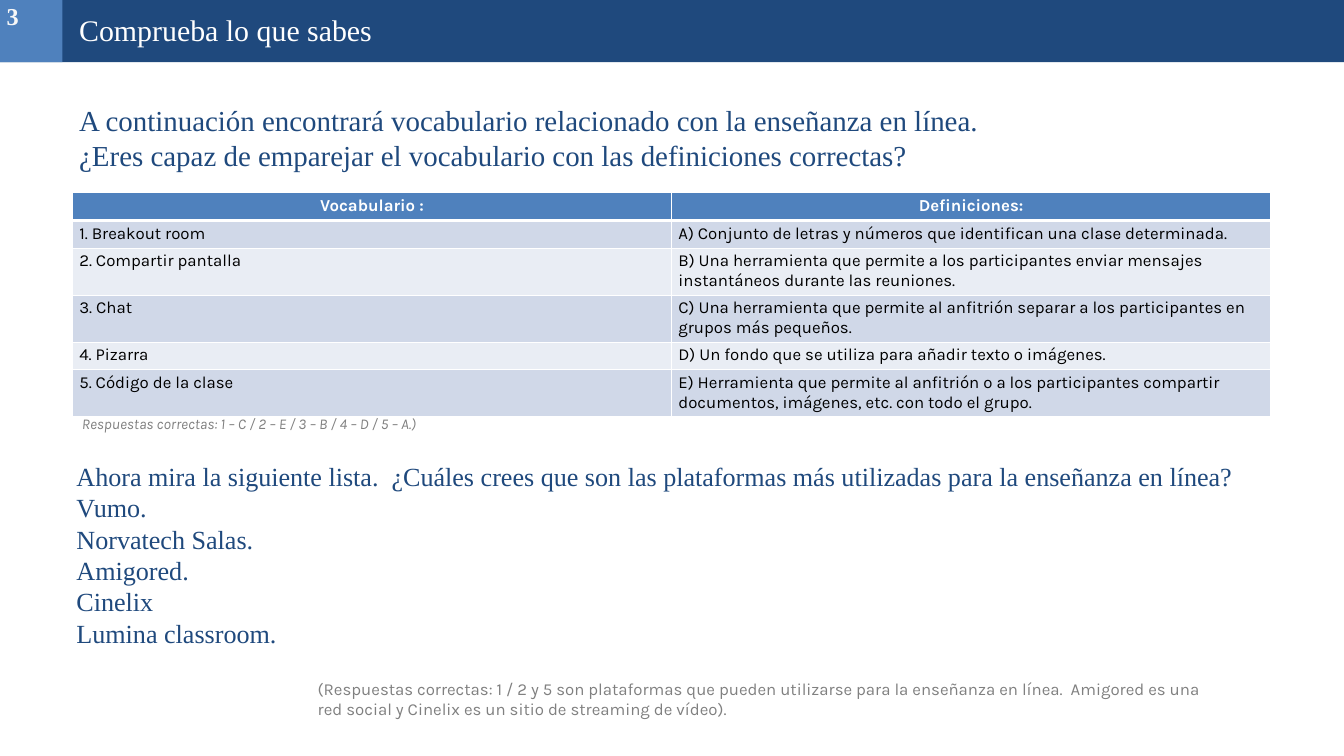
from dataclasses import dataclass

from lxml.etree import SubElement
from pptx import Presentation
from pptx.dml.color import RGBColor as Color
from pptx.enum.shapes import MSO_SHAPE as Preset
from pptx.enum.text import MSO_ANCHOR as Anchor, PP_ALIGN as Align
from pptx.oxml.ns import qn
from pptx.util import Inches, Pt

COLUMNS, ROWS = 80, 45


@dataclass(frozen=True)
class Theme:
    navy: str = "1F497D"
    blue: str = "4F81BD"
    white: str = "FFFFFF"
    number: str = "F7F7F7"
    grey: str = "808080"
    black: str = "000000"
    bands: tuple = ("D0D8E8", "E9EDF4")
    serif: str = "Times New Roman"
    sans: str = "Karla"
    heading: int = 32
    title: int = 31
    body: int = 28
    page: int = 26
    cell: int = 18
    answer: int = 16


class VocabularySlide:
    """Draws the quiz slide on a grid of 80 columns by 45 rows."""

    def __init__(self, presentation, theme):
        self.theme = theme
        self.slide = presentation.slides.add_slide(presentation.slide_layouts[6])
        self.column = presentation.slide_width / COLUMNS
        self.row = presentation.slide_height / ROWS

    def place(self, left, top, width, height):
        return (round(left * self.column), round(top * self.row),
                round(width * self.column), round(height * self.row))

    def style(self, paragraph, size, color, face, bold=False, italic=False):
        for run in paragraph.runs:
            font = run.font
            font.name, font.size = face, Pt(size)
            font.bold, font.italic = bold, italic
            font.color.rgb = Color.from_string(color)

    def band(self, box, color):
        shape = self.slide.shapes.add_shape(Preset.RECTANGLE, *self.place(*box))
        shape.shadow.inherit = False
        shape.fill.solid()
        shape.fill.fore_color.rgb = Color.from_string(color)
        shape.line.fill.background()

    def text(self, box, content, size, color, face, anchor=Anchor.TOP, **emphasis):
        shape = self.slide.shapes.add_textbox(*self.place(*box))
        frame = shape.text_frame
        frame.word_wrap = True
        frame.vertical_anchor = anchor
        frame.text = content
        for paragraph in frame.paragraphs:
            self.style(paragraph, size, color, face, **emphasis)

    def border(self, cell, bottom):
        properties = cell._tc.get_or_add_tcPr()
        for edge, width in (("L", 1), ("R", 1), ("T", 1), ("B", bottom)):
            line = SubElement(properties, qn(f"a:ln{edge}"), w=str(Pt(width)))
            fill = SubElement(line, qn("a:solidFill"))
            SubElement(fill, qn("a:srgbClr"), val=self.theme.white)

    def table(self, box, entries):
        theme = self.theme
        table = self.slide.shapes.add_table(
            len(entries), len(entries[0]), *self.place(*box)).table
        for index, entry in enumerate(entries):
            header = index == 0
            fill = theme.blue if header else theme.bands[(index - 1) % 2]
            for cell, content in zip(table.rows[index].cells, entry):
                cell.text = content
                self.border(cell, 3 if header else 1)
                cell.fill.solid()
                cell.fill.fore_color.rgb = Color.from_string(fill)
                paragraph = cell.text_frame.paragraphs[0]
                paragraph.alignment = Align.CENTER if header else Align.LEFT
                self.style(paragraph, theme.cell,
                           theme.white if header else theme.black,
                           theme.sans, bold=header)


VOCABULARY = (
    ("Vocabulario :", "Definiciones:"),
    ("1. Breakout room",
     "A) Conjunto de letras y números que identifican una clase determinada."),
    ("2. Compartir pantalla",
     "B) Una herramienta que permite a los participantes enviar mensajes "
     "instantáneos durante las reuniones."),
    ("3. Chat",
     "C) Una herramienta que permite al anfitrión separar a los participantes "
     "en grupos más pequeños."),
    ("4. Pizarra", "D) Un fondo que se utiliza para añadir texto o imágenes."),
    ("5. Código de la clase",
     "E) Herramienta que permite al anfitrión o a los participantes compartir "
     "documentos, imágenes, etc. con todo el grupo."),
)
QUESTION = (
    "A continuación encontrará vocabulario relacionado con la enseñanza en línea.",
    "¿Eres capaz de emparejar el vocabulario con las definiciones correctas?",
)
PLATFORMS = (
    "Ahora mira la siguiente lista.  ¿Cuáles crees que son las plataformas más "
    "utilizadas para la enseñanza en línea?",
    "Vumo.", "Norvatech Salas.", "Amigored.", "Cinelix", "Lumina classroom.",
)
SOLUTION = (
    "(Respuestas correctas: 1 / 2 y 5 son plataformas que pueden utilizarse para "
    "la enseñanza en línea.  Amigored es una red social y Cinelix es un sitio de "
    "streaming de vídeo)."
)


def main():
    presentation = Presentation()
    presentation.slide_width, presentation.slide_height = Inches(20), Inches(11.25)
    theme = Theme()
    quiz = VocabularySlide(presentation, theme)
    left, width = 4.32, 71.32

    quiz.band((0, 0, COLUMNS, 3.7), theme.navy)
    quiz.band((0, 0, 3.72, 3.7), theme.blue)
    quiz.text((left, 5.84, width, 4.68), "\n".join(QUESTION),
              theme.title, theme.navy, theme.serif, Anchor.MIDDLE)
    quiz.table((left, 11.48, width, 9.84), VOCABULARY)
    quiz.text((left, 0.48, 41.32, 2.68), "Comprueba lo que sabes",
              theme.heading, theme.white, theme.serif)
    quiz.text((0, -0.12, 3.64, 3.72), "3",
              theme.page, theme.number, theme.serif, bold=True)
    quiz.text((4.16, 27.2, 75.84, 12.92), "\n".join(PLATFORMS),
              theme.body, theme.navy, theme.serif)
    quiz.text((4.48, 24.48, width, 2.68),
              "Respuestas correctas: 1 – C / 2 – E / 3 – B / 4 – D / 5 – A.)",
              theme.answer, theme.grey, theme.sans, italic=True)
    quiz.text((18.52, 40.2, 54.32, 2.84), SOLUTION,
              theme.cell, theme.grey, theme.sans)
    presentation.save("out.pptx")


if __name__ == "__main__":
    main()
